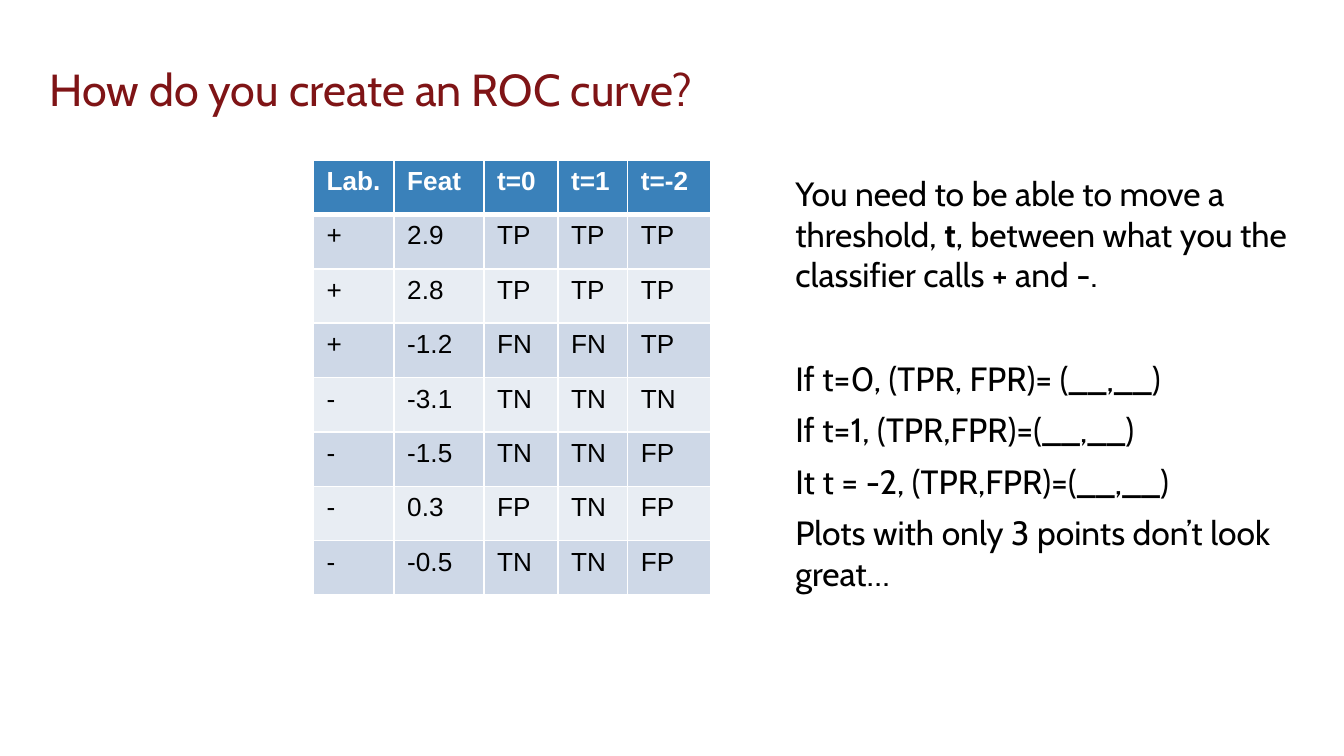
from lxml.etree import fromstring
from pptx import Presentation
from pptx.dml.color import RGBColor
from pptx.enum.text import MSO_ANCHOR
from pptx.oxml.ns import nsdecls
from pptx.util import Inches, Pt

COLORS = {
    "title": "7F1416", "text": "000000", "header": "3A81BA", "border": "FFFFFF",
    "header_text": "FFFFFF", "odd_row": "CED8E7", "even_row": "E8EDF3",
}
WIDTH = 10
HEIGHT = WIDTH * 9 / 16
CONTENT_TOP = 1.19 / HEIGHT


def across(share):
    return Inches(WIDTH * share)


def down(share):
    return Inches(HEIGHT * share)


deck = Presentation()
deck.slide_width, deck.slide_height = across(1), down(1)
page = deck.slides.add_slide(deck.slide_layouts[6])

# Text: place, anchor, size, colour, then paragraphs of (words, bold) spans
title = [[("How do you create an ROC curve?", False)]]
explanation = [
    [("You need to be able to move a threshold, ", False), ("t", True),
     (", between what you the classifier calls + and -.", False)],
    [("If t=0, (TPR, FPR)= (__,__)", False)],
    [("If t=1, (TPR,FPR)=(__,__)", False)],
    [("It t = -2, (TPR,FPR)=(__,__)", False)],
    [("Plots with only 3 points don’t look great…", False)],
]
space_before = [0, 34, 6, 6, 6]
text_boxes = [
    ((0.027, 0.07 / HEIGHT, 0.944, 0.89 / HEIGHT), MSO_ANCHOR.BOTTOM, 24, "title", title),
    ((0.582, CONTENT_TOP, 0.39, 3.16 / HEIGHT), MSO_ANCHOR.TOP, 18, "text", explanation),
]
for (left, top, width, height), anchor, size, color, paragraphs in text_boxes:
    box = page.shapes.add_textbox(across(left), down(top), across(width), down(height))
    frame = box.text_frame
    frame.word_wrap = True
    frame.vertical_anchor = anchor
    frame.margin_left = frame.margin_right = Inches(0.1)
    frame.margin_top = frame.margin_bottom = Inches(0.1)
    for index, (spans, gap) in enumerate(zip(paragraphs, space_before)):
        para = frame.paragraphs[0] if index == 0 else frame.add_paragraph()
        if gap:
            para.space_before = Pt(gap)
        for words, bold in spans:
            span = para.add_run()
            span.text = words
            span.font.name = "Cabin"
            span.font.size = Pt(size)
            span.font.bold = bold
            span.font.color.rgb = RGBColor.from_string(COLORS[color])

# Table of outcomes per threshold; the default style draws the thin white borders
rows = [
    ["Lab.", "Feat", "t=0", "t=1", "t=-2"],
    ["+", "2.9", "TP", "TP", "TP"],
    ["+", "2.8", "TP", "TP", "TP"],
    ["+", "-1.2", "FN", "FN", "TP"],
    ["-", "-3.1", "TN", "TN", "TN"],
    ["-", "-1.5", "TN", "TN", "FP"],
    ["-", "0.3", "FP", "TN", "FP"],
    ["-", "-0.5", "TN", "TN", "FP"],
]
column_shares = [0.06, 0.067, 0.055, 0.052, 0.062]
table_height = 3.24 / HEIGHT
table = page.shapes.add_table(
    len(rows), len(column_shares), across(0.233), down(CONTENT_TOP),
    across(sum(column_shares)), down(table_height)).table
for column, share in zip(table.columns, column_shares):
    column.width = across(share)
for row_index, values in enumerate(rows):
    table.rows[row_index].height = down(table_height / len(rows))
    is_header = row_index == 0
    fill = "header" if is_header else "odd_row" if row_index % 2 else "even_row"
    for column_index, value in enumerate(values):
        cell = table.cell(row_index, column_index)
        cell.margin_right = Inches(0.05)
        cell.fill.solid()
        cell.fill.fore_color.rgb = RGBColor.from_string(COLORS[fill])
        cell.text_frame.text = value
        font = cell.text_frame.paragraphs[0].runs[0].font
        font.name = "Arial"
        font.size = Pt(14)
        font.bold = is_header
        font.color.rgb = RGBColor.from_string(COLORS["header_text" if is_header else "text"])
        # Thick rule under the header
        if is_header:
            cell._tc.get_or_add_tcPr().insert(0, fromstring(
                f'<a:lnB {nsdecls("a")} w="{Pt(3)}"><a:solidFill>'
                f'<a:srgbClr val="{COLORS["border"]}"/></a:solidFill></a:lnB>'))

deck.save("out.pptx")
